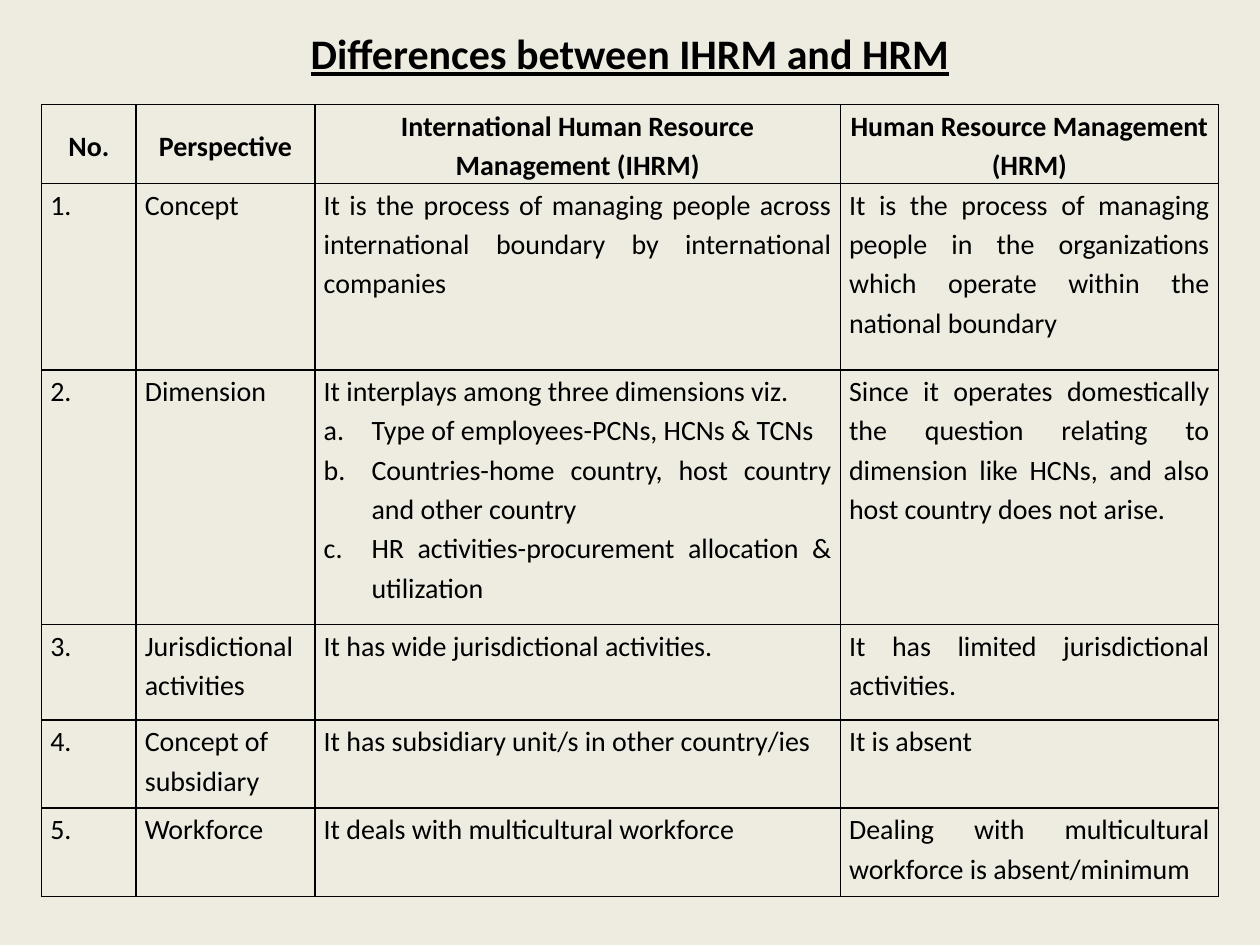
from lxml import etree
from pptx import Presentation
from pptx.dml.color import RGBColor
from pptx.enum.text import MSO_ANCHOR, PP_ALIGN
from pptx.oxml.ns import qn
from pptx.util import Inches, Pt

LEFT, CENTER, JUSTIFY = PP_ALIGN.LEFT, PP_ALIGN.CENTER, PP_ALIGN.JUSTIFY
TOP, MIDDLE = MSO_ANCHOR.TOP, MSO_ANCHOR.MIDDLE
COLORS = {"background": "EEECE1", "ink": "000000"}
FONT = "Calibri"
TITLE = "Differences between IHRM and HRM"
COLUMN_WIDTHS = [0.75, 1.42, 4.17, 3]
ROW_HEIGHTS = [0.62, 1.48, 2.02, 0.76, 0.7, 0.7]
COLUMN_ALIGNMENTS = [LEFT, LEFT, JUSTIFY, JUSTIFY]
HEADER = [
    "No.",
    "Perspective",
    "International Human Resource Management (IHRM)",
    "Human Resource Management (HRM)",
]
DIMENSIONS = [
    "Type of employees-PCNs, HCNs & TCNs",
    "Countries-home country, host country and other country",
    "HR activities-procurement allocation & utilization",
]
COMPARISONS = [
    (
        "Concept",
        "It is the process of managing people across international boundary by international companies",
        "It is the process of managing people in the organizations which operate within the national boundary",
    ),
    (
        "Dimension",
        "It interplays among three dimensions viz.",
        "Since it operates domestically the question relating to dimension like HCNs, "
        "and also host country does not arise.",
    ),
    (
        "Jurisdictional activities",
        "It has wide jurisdictional activities.",
        "It has limited jurisdictional activities.",
    ),
    (
        "Concept of subsidiary",
        "It has subsidiary unit/s in other country/ies",
        "It is absent",
    ),
    (
        "Workforce",
        "It deals with multicultural workforce",
        "Dealing with multicultural workforce is absent/minimum",
    ),
]


def write_text(paragraph, text, size=16, bold=False, underline=False, alignment=LEFT, spacing=1.15):
    """Write one formatted run into a paragraph."""
    paragraph.alignment = alignment
    paragraph.line_spacing = spacing
    paragraph.space_before = paragraph.space_after = Pt(0)
    run = paragraph.add_run()
    run.text = text
    run.font.name = FONT
    run.font.size = Pt(size)
    run.font.bold = bold
    run.font.underline = underline
    run.font.color.rgb = RGBColor.from_string(COLORS["ink"])


def number_with_letters(paragraph):
    """Give a paragraph a hanging a. b. c. number."""
    properties = paragraph._p.get_or_add_pPr()
    properties.set("marL", str(Inches(0.38)))
    properties.set("indent", str(Inches(-0.38)))
    etree.SubElement(properties, qn("a:buFont"), typeface="+mj-lt")
    etree.SubElement(properties, qn("a:buAutoNum"), type="alphaLcPeriod")


def format_cell(cell, anchor):
    """Set the margins, borders and empty fill of a cell."""
    cell.margin_left = cell.margin_right = Inches(0.07)
    cell.margin_top = cell.margin_bottom = 0
    cell.vertical_anchor = anchor
    properties = cell._tc.get_or_add_tcPr()
    for side in ("lnL", "lnR", "lnT", "lnB"):
        line = etree.SubElement(properties, qn(f"a:{side}"), w=str(Pt(1)))
        fill = etree.SubElement(line, qn("a:solidFill"))
        etree.SubElement(fill, qn("a:srgbClr"), val=COLORS["ink"])
    cell.fill.background()


def add_title(slide):
    """Place and write the slide title."""
    title = slide.shapes.title
    title.left, title.top = Inches(0.25), Inches(0.17)
    title.width, title.height = Inches(9.5), Inches(0.5)
    title.text_frame.vertical_anchor = MIDDLE
    write_text(title.text_frame.paragraphs[0], TITLE, size=24, bold=True,
               underline=True, alignment=CENTER, spacing=1.0)


def add_comparison_table(slide):
    """Add the table that compares IHRM with HRM."""
    table = slide.shapes.add_table(
        len(ROW_HEIGHTS), len(COLUMN_WIDTHS), Inches(0.33), Inches(0.83),
        Inches(sum(COLUMN_WIDTHS)), Inches(sum(ROW_HEIGHTS)),
    ).table
    table.first_row = table.horz_banding = False
    for column, width in zip(table.columns, COLUMN_WIDTHS):
        column.width = Inches(width)
    for row, height in zip(table.rows, ROW_HEIGHTS):
        row.height = Inches(height)

    for cell, text in zip(table.rows[0].cells, HEADER):
        format_cell(cell, MIDDLE)
        write_text(cell.text_frame.paragraphs[0], text, bold=True, alignment=CENTER)
    for number, comparison in enumerate(COMPARISONS, start=1):
        texts = (f"{number}.", *comparison)
        for cell, text, alignment in zip(table.rows[number].cells, texts, COLUMN_ALIGNMENTS):
            format_cell(cell, TOP)
            write_text(cell.text_frame.paragraphs[0], text, alignment=alignment)

    for dimension in DIMENSIONS:
        paragraph = table.cell(2, 2).text_frame.add_paragraph()
        write_text(paragraph, dimension, alignment=JUSTIFY)
        number_with_letters(paragraph)


def main():
    """Build and save the slide."""
    presentation = Presentation()
    presentation.slide_width, presentation.slide_height = Inches(10), Inches(7.5)
    slide = presentation.slides.add_slide(presentation.slide_layouts[5])
    slide.background.fill.solid()
    slide.background.fill.fore_color.rgb = RGBColor.from_string(COLORS["background"])
    add_title(slide)
    add_comparison_table(slide)
    presentation.save("out.pptx")


if __name__ == "__main__":
    main()
